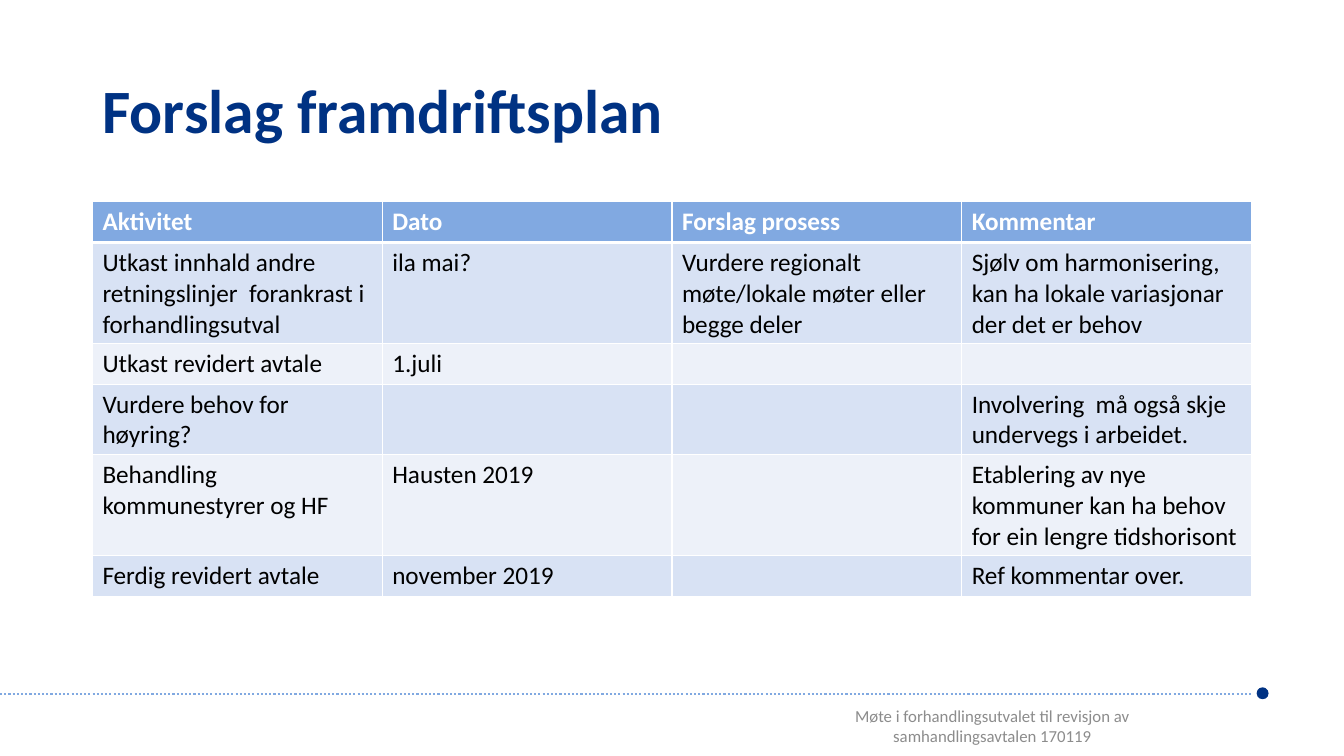
import pptx
import pptx.dml.color
import pptx.enum.dml
import pptx.enum.shapes
import pptx.enum.text
import pptx.oxml.ns
import pptx.util
from lxml import etree

Cm = pptx.util.Cm
Pt = pptx.util.Pt
RGBColor = pptx.dml.color.RGBColor
Align = pptx.enum.text.PP_ALIGN

NAVY = RGBColor(0x00, 0x32, 0x83)
SKY = RGBColor(0x81, 0xA9, 0xE1)
BAND_DARK = RGBColor(0xD8, 0xE2, 0xF4)
BAND_LIGHT = RGBColor(0xED, 0xF1, 0xF9)
GREY = RGBColor(0x8C, 0x8C, 0x8C)
BLACK = RGBColor(0, 0, 0)
WHITE = RGBColor(255, 255, 255)
FONT = "Calibri"

PLAN = [
    ["Aktivitet", "Dato", "Forslag prosess", "Kommentar"],
    ["Utkast innhald andre retningslinjer  forankrast i forhandlingsutval", "ila mai?",
     "Vurdere regionalt møte/lokale møter eller begge deler",
     "Sjølv om harmonisering, kan ha lokale variasjonar der det er behov"],
    ["Utkast revidert avtale", "1.juli", "", ""],
    ["Vurdere behov for høyring?", "", "",
     "Involvering  må også skje undervegs i arbeidet."],
    ["Behandling kommunestyrer og HF", "Hausten 2019", "",
     "Etablering av nye kommuner kan ha behov for ein lengre tidshorisont"],
    ["Ferdig revidert avtale", "november 2019", "", "Ref kommentar over."],
]


def style_font(font, size, color, bold=False):
    font.name = FONT
    font.size = Pt(size)
    font.bold = bold
    font.color.rgb = color


def add_text(page, left, top, width, height, text, size, color,
             bold=False, align=Align.LEFT, line_spacing=1.0):
    box = page.shapes.add_textbox(Cm(left), Cm(top), Cm(width), Cm(height))
    frame = box.text_frame
    frame.word_wrap = True
    frame.vertical_anchor = pptx.enum.text.MSO_ANCHOR.MIDDLE
    frame.text = text
    para = frame.paragraphs[0]
    para.alignment = align
    para.line_spacing = line_spacing
    style_font(para.runs[0].font, size, color, bold)


def add_border(cell, side, points):
    properties = cell._tc.get_or_add_tcPr()
    line = etree.SubElement(properties, pptx.oxml.ns.qn(f"a:ln{side}"), w=str(Pt(points)))
    fill = etree.SubElement(line, pptx.oxml.ns.qn("a:solidFill"))
    etree.SubElement(fill, pptx.oxml.ns.qn("a:srgbClr"), val=str(WHITE))


def style_cell(cell, row):
    header = row == 0
    for side in "LRTB":
        thick = (header and side == "B") or (row == 1 and side == "T")
        add_border(cell, side, 3 if thick else 1)
    cell.fill.solid()
    cell.fill.fore_color.rgb = SKY if header else BAND_DARK if row % 2 else BAND_LIGHT
    style_font(cell.text_frame.paragraphs[0].font, 18, WHITE if header else BLACK, header)
    for span in cell.text_frame.paragraphs[0].runs:
        style_font(span.font, 18, WHITE if header else BLACK, header)


def add_plan_table(page, left, top, width, row_height):
    rows, columns = len(PLAN), len(PLAN[0])
    table = page.shapes.add_table(rows, columns, Cm(left), Cm(top),
                                  Cm(width), Cm(row_height * rows)).table
    for column in table.columns:
        column.width = Cm(width / columns)
    for row, texts in enumerate(PLAN):
        for column, text in enumerate(texts):
            cell = table.cell(row, column)
            cell.text_frame.text = text
            style_cell(cell, row)


def add_dotted_line(page, left, right, y):
    line = page.shapes.add_connector(pptx.enum.shapes.MSO_CONNECTOR.STRAIGHT,
                                     Cm(left), Cm(y), Cm(right), Cm(y))
    line.line.color.rgb = SKY
    line.line.width = Pt(1.5)
    line.line.dash_style = pptx.enum.dml.MSO_LINE.ROUND_DOT
    etree.SubElement(line._element.spPr, pptx.oxml.ns.qn("a:effectLst"))


def add_dot(page, left, top, size):
    dot = page.shapes.add_shape(pptx.enum.shapes.MSO_SHAPE.OVAL,
                                Cm(left), Cm(top), Cm(size), Cm(size))
    dot.shadow.inherit = False
    dot.fill.solid()
    dot.fill.fore_color.rgb = NAVY
    dot.line.fill.background()


def main():
    deck = pptx.Presentation()
    deck.slide_width, deck.slide_height = Cm(33.87), Cm(19.05)
    page = deck.slides.add_slide(deck.slide_layouts[6])

    # Footer rule with end dot
    add_dotted_line(page, 0, 31.55, 17.48)
    add_dot(page, 31.67, 17.32, 0.3)

    # Title and plan
    add_text(page, 2.33, 1.02, 29.21, 3.68, "Forslag framdriftsplan", 44, NAVY,
             bold=True, line_spacing=0.9)
    add_plan_table(page, 2.33, 5.08, 29.21, 1.03)

    # Footer text
    add_text(page, 20.4, 17.78, 9.22, 1.02,
             "Møte i forhandlingsutvalet til revisjon av samhandlingsavtalen 170119",
             12, GREY, align=Align.CENTER)

    deck.save("out.pptx")


if __name__ == "__main__":
    main()
